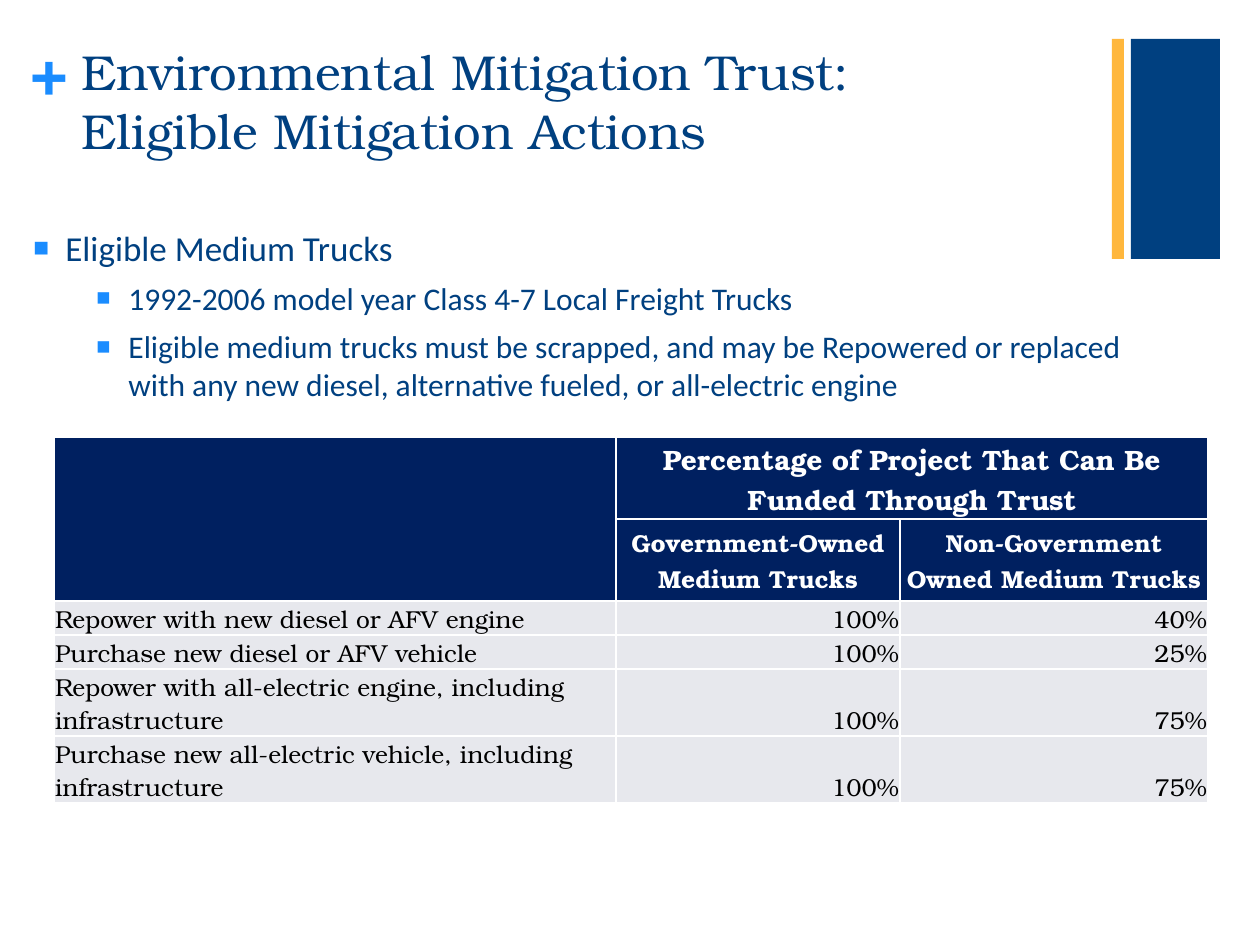
from lxml import etree
from pptx import Presentation
from pptx import util as u
from pptx.dml.color import RGBColor
from pptx.enum import shapes, text
from pptx.oxml import ns

NAVY = RGBColor(0x00, 0x40, 0x80)
GOLD = RGBColor(0xFF, 0xB7, 0x3D)
SKY = RGBColor(0x1A, 0x8C, 0xFF)
DEEP = RGBColor(0x00, 0x20, 0x60)
PALE = RGBColor(0xE7, 0xE8, 0xED)
WHITE = RGBColor(0xFF, 0xFF, 0xFF)
BLACK = RGBColor(0x00, 0x00, 0x00)
SERIF, SANS = "TeX Gyre Bonum", "Calibri"
LEFT, MID, RIGHT = text.PP_ALIGN.LEFT, text.PP_ALIGN.CENTER, text.PP_ALIGN.RIGHT


def px(n):
    return u.Emu(round(n * 914400 / 126))


def add(node, tag, **attrs):
    return etree.SubElement(node, ns.qn(tag), attrs)


class Deck:
    def __init__(self):
        self.prs = Presentation()
        self.prs.slide_width, self.prs.slide_height = px(1260), px(945)
        self.slide = self.prs.slides.add_slide(self.prs.slide_layouts[5])

    def run(self, para, words, size, color, font=SERIF, bold=False):
        run = para.add_run()
        run.text = words
        run.font.size, run.font.name, run.font.bold = u.Pt(size), font, bold
        run.font.color.rgb = color

    def title(self, box, lines):
        shape = self.slide.shapes.title
        shape.left, shape.top, shape.width, shape.height = map(px, box)
        frame = shape.text_frame
        frame.auto_size = text.MSO_AUTO_SIZE.NONE
        frame.vertical_anchor = text.MSO_ANCHOR.TOP
        para = frame.paragraphs[0]
        para.alignment = LEFT
        for i, line in enumerate(lines):
            if i:
                para.add_line_break()
            self.run(para, line, 28, NAVY)

    def rect(self, box, color):
        shape = self.slide.shapes.add_shape(shapes.MSO_SHAPE.RECTANGLE, *map(px, box))
        shape.shadow.inherit = False
        shape.fill.solid()
        shape.fill.fore_color.rgb = color
        shape.line.fill.background()

    def frame(self, box):
        frame = self.slide.shapes.add_textbox(*map(px, box)).text_frame
        frame.word_wrap = True
        return frame

    def sign(self, box, mark):
        frame = self.frame(box)
        frame.margin_left = frame.margin_right = frame.margin_top = frame.margin_bottom = 0
        self.run(frame.paragraphs[0], mark, 36, SKY, bold=True)

    def bullets(self, box, items):
        frame = self.frame(box)
        for i, (level, indent, size, words) in enumerate(items):
            para = frame.add_paragraph() if i else frame.paragraphs[0]
            para.level, para.space_after = level, u.Pt(6)
            props = para._p.get_or_add_pPr()
            props.set("marL", str(px(indent)))
            props.set("indent", str(-px(32)))
            add(add(props, "a:buClr"), "a:srgbClr", val=str(SKY))
            add(props, "a:buSzPct", val="75000")
            add(props, "a:buFont", typeface="Arial")
            add(props, "a:buChar", char="■")
            self.run(para, words, size, NAVY, SANS)

    def cell(self, cell, words, size, align, head):
        cell.margin_left = cell.margin_right = cell.margin_top = px(1)
        cell.margin_bottom = 0
        cell.vertical_anchor = text.MSO_ANCHOR.MIDDLE if head else text.MSO_ANCHOR.BOTTOM
        props = cell._tc.get_or_add_tcPr()
        for side in ("a:lnL", "a:lnR", "a:lnT", "a:lnB"):
            line = add(props, side, w=str(u.Pt(1)))
            add(add(line, "a:solidFill"), "a:srgbClr", val=str(WHITE))
        cell.fill.solid()
        cell.fill.fore_color.rgb = DEEP if head else PALE
        if words:
            para = cell.text_frame.paragraphs[0]
            para.alignment = align
            self.run(para, words, size, WHITE if head else BLACK, bold=head)

    def table(self, spot, cols, rows, data, heads):
        box = (*spot, sum(cols), sum(rows))
        grid = self.slide.shapes.add_table(len(rows), len(cols), *map(px, box)).table
        for col, wide in zip(grid.columns, cols):
            col.width = px(wide)
        for row, high in zip(grid.rows, rows):
            row.height = px(high)
        for r, line in enumerate(data):
            for c, words in enumerate(line):
                head = r < heads
                align = MID if head else RIGHT if c else LEFT
                self.cell(grid.cell(r, c), words, 14 if r else 16, align, head)
        grid.cell(0, 0).merge(grid.cell(1, 0))
        grid.cell(0, 1).merge(grid.cell(0, 2))


def main():
    deck = Deck()
    deck.rect((1131, 39, 89, 220), NAVY)
    deck.rect((1112, 39, 12, 220), GOLD)
    deck.sign((31, 32, 37, 77), "+")
    deck.title((69, 35, 885, 146),
               ["Environmental Mitigation Trust:", "Eligible Mitigation Actions"])
    deck.bullets((-10, 220, 1152, 711), [
        (1, 63, 20, "Eligible Medium Trucks"),
        (3, 126, 18, "1992-2006 model year Class 4-7 Local Freight Trucks"),
        (3, 126, 18, "Eligible medium trucks must be scrapped, and may be Repowered or replaced "
                     "with any new diesel, alternative fueled, or all-electric engine"),
    ])
    deck.table((54, 437), (562, 284, 308), (82, 82, 34, 34, 67, 67), [
        ("", "Percentage of Project That Can Be Funded Through Trust", ""),
        ("", "Government-Owned Medium Trucks", "Non-Government Owned Medium Trucks"),
        ("Repower with new diesel or AFV engine", "100%", "40%"),
        ("Purchase new diesel or AFV vehicle", "100%", "25%"),
        ("Repower with all-electric engine, including infrastructure", "100%", "75%"),
        ("Purchase new all-electric vehicle, including infrastructure", "100%", "75%"),
    ], 2)
    deck.prs.save("out.pptx")


if __name__ == "__main__":
    main()
